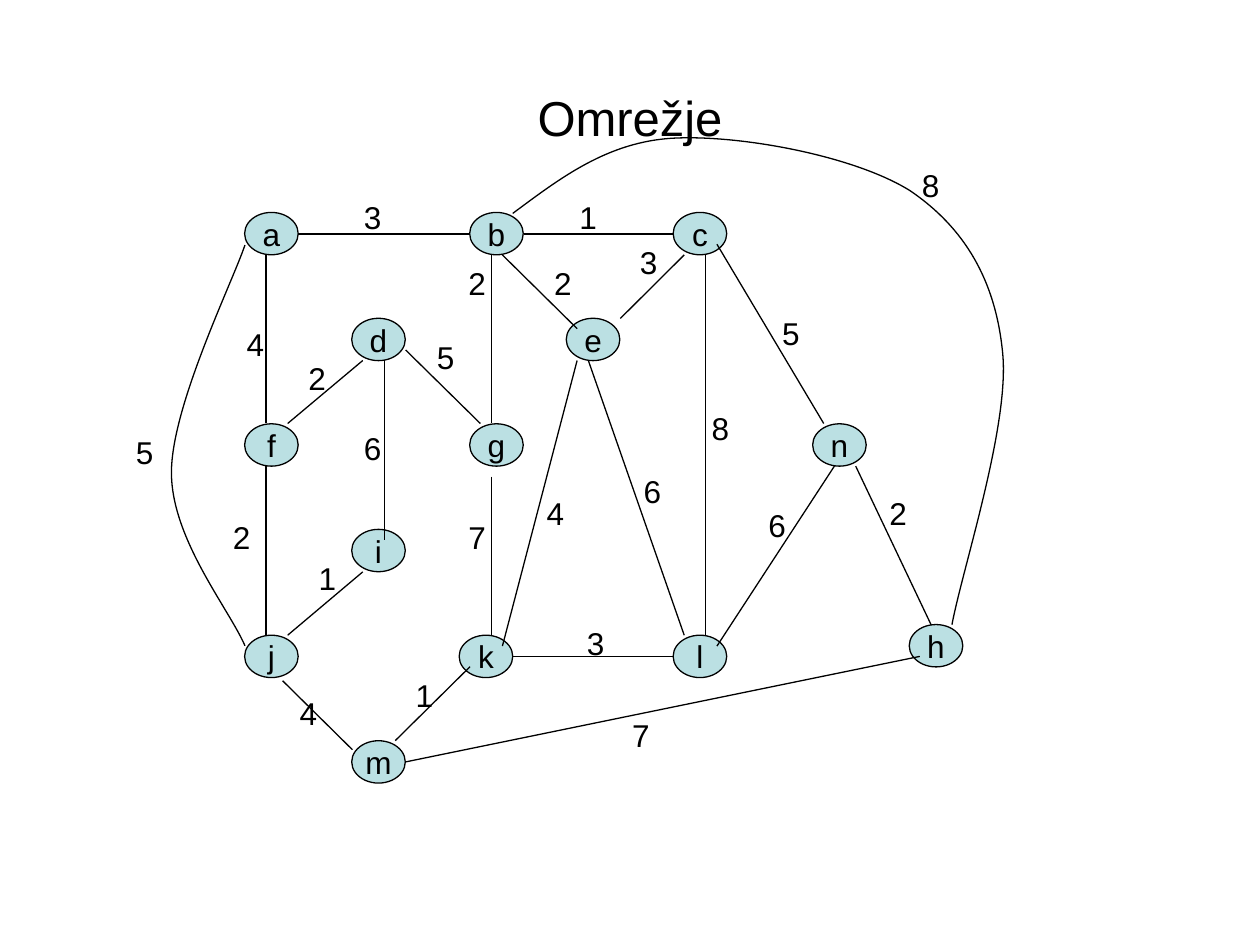
import pptx
import pptx.util
import pptx.dml.color
import pptx.enum.shapes
import pptx.enum.text
import pptx.oxml
import pptx.oxml.ns

Pt = pptx.util.Pt
COLORS = {"ink": "000000", "node": "BBE0E3"}
FONT = "Arial"
TITLE = "Omrežje"
NODE_WIDTH, NODE_HEIGHT = 30.6, 24.2
LABEL_WIDTH, LABEL_HEIGHT = 24.5, 28.8

NODES = {
    "a": (155.1, 133.5), "b": (283.7, 133.5), "c": (400, 133.5),
    "d": (216.3, 194), "e": (338.9, 194),
    "f": (155.1, 254.3), "g": (283.7, 254.3), "n": (479.7, 254.3),
    "i": (216.3, 314.6), "j": (155.1, 375.1), "k": (277.7, 375.1),
    "l": (400, 375.1), "h": (534.9, 369), "m": (216.3, 435.4),
}

# weight, label corner, start, end
EDGES = [
    ("3", (200.9, 109.4), (170.4, 133.7), (268.6, 133.7)),
    ("1", (324, 109.4), (299.3, 133.7), (385.2, 133.7)),
    ("3", (358.6, 135.4), (391, 145.7), (354.5, 182)),
    ("8", (399.6, 230.4), (403.2, 145.7), (403.2, 363)),
    ("6", (432, 285.8), (476.8, 266.4), (409.7, 369.2)),
    ("2", (501.1, 278.6), (489, 266.4), (532.1, 357.1)),
    ("1", (230.4, 383), (225.9, 423.2), (268.6, 381)),
    ("4", (133.9, 182.2), (152.1, 145.7), (152.1, 242)),
    ("2", (126, 292.3), (152.1, 266.4), (152.1, 363)),
    ("1", (175, 316.1), (164.4, 363), (207.3, 326.8)),
    ("6", (200.9, 241.9), (219.6, 206), (219.6, 308.6)),
    ("2", (169.2, 201.6), (164.4, 242), (207.3, 206)),
    ("5", (242.6, 189.4), (231.8, 200), (274.5, 242)),
    ("2", (309.6, 147.6), (287.1, 145.7), (329.8, 187.8)),
    ("2", (260.6, 147.6), (280.9, 145.7), (280.9, 242)),
    ("7", (260.6, 292.3), (280.9, 272.4), (280.9, 363)),
    ("6", (360.7, 266.4), (336.2, 206), (391, 363)),
    ("7", (354.2, 405.4), (231.8, 435.4), (525.6, 375.1)),
    ("5", (439.9, 175.7), (409.7, 139.6), (470.7, 242)),
    ("3", (328.3, 352.8), (293.1, 375.1), (385.2, 375.1)),
    ("4", (305.3, 278.6), (329.8, 206), (287.1, 369.2)),
    ("4", (164.2, 393.1), (161.5, 389), (201.4, 428.4)),
]

CURVED_EDGES = [
    ("5", (70.6, 244.1), [
        (139.9, 139.6), (133.2, 161.3), (97.9, 231.8), (97.9, 270),
        (97.9, 308.2), (131, 348.5), (139.9, 369.2)]),
    ("8", (519.8, 91.4), [
        (293.1, 121.5), (320.4, 101.5), (347, 81.4), (385.2, 79.2),
        (422.6, 77), (488.2, 89.3), (519.8, 109.4),
        (550.8, 129.6), (568.8, 159.8), (573.1, 201.6),
        (577.4, 242.6), (550, 324.7), (544.2, 357.1)]),
]


def rgb(name):
    return pptx.dml.color.RGBColor.from_string(COLORS[name])


def write_text(shape, text, size=18, align=None, anchor=None, wrap=False, auto_size=None):
    frame = shape.text_frame
    frame.word_wrap = wrap
    if anchor is not None:
        frame.vertical_anchor = anchor
    if auto_size is not None:
        frame.auto_size = auto_size
    paragraph = frame.paragraphs[0]
    paragraph.alignment = align
    run = paragraph.add_run()
    run.text = text
    run.font.name = FONT
    run.font.size = Pt(size)
    run.font.color.rgb = rgb("ink")


def outline(shape):
    shape.line.color.rgb = rgb("ink")
    shape.line.width = Pt(0.75)


def add_node(shapes, name, center):
    shape = shapes.add_shape(
        pptx.enum.shapes.MSO_SHAPE.OVAL,
        Pt(center[0] - NODE_WIDTH / 2), Pt(center[1] - NODE_HEIGHT / 2),
        Pt(NODE_WIDTH), Pt(NODE_HEIGHT))
    shape.shadow.inherit = False
    shape.fill.solid()
    shape.fill.fore_color.rgb = rgb("node")
    outline(shape)
    write_text(shape, name, align=pptx.enum.text.PP_ALIGN.CENTER,
               anchor=pptx.enum.text.MSO_ANCHOR.MIDDLE)


def add_edge(shapes, start, end):
    connector = shapes.add_connector(
        pptx.enum.shapes.MSO_CONNECTOR.STRAIGHT,
        *[Pt(value) for value in start + end])
    outline(connector)
    connector._element.spPr.append(pptx.oxml.parse_xml(
        f'<a:effectLst {pptx.oxml.ns.nsdecls("a")}/>'))


def add_curve(shapes, points):
    builder = shapes.build_freeform(*points[0], scale=Pt(1))
    builder.add_line_segments(points[1:], close=False)
    shape = builder.convert_to_shape()
    shape.shadow.inherit = False
    shape.fill.background()
    outline(shape)
    segments = shape._element.findall(".//" + pptx.oxml.ns.qn("a:lnTo"))
    for index in range(0, len(segments), 3):
        curve = pptx.oxml.parse_xml(
            f'<a:cubicBezTo {pptx.oxml.ns.nsdecls("a")}/>')
        segments[index].addprevious(curve)
        for segment in segments[index:index + 3]:
            curve.append(segment[0])
            segment.getparent().remove(segment)


def add_label(shapes, weight, corner):
    box = shapes.add_textbox(
        Pt(corner[0]), Pt(corner[1]), Pt(LABEL_WIDTH), Pt(LABEL_HEIGHT))
    write_text(box, weight,
               auto_size=pptx.enum.text.MSO_AUTO_SIZE.SHAPE_TO_FIT_TEXT)


def main():
    presentation = pptx.Presentation()
    presentation.slide_width, presentation.slide_height = Pt(720), Pt(540)
    slide = presentation.slides.add_slide(presentation.slide_layouts[5])

    title = slide.shapes.title
    title.left, title.top, title.width, title.height = Pt(36), Pt(21.6), Pt(648), Pt(90)
    write_text(title, TITLE, size=28, wrap=True,
               align=pptx.enum.text.PP_ALIGN.CENTER,
               anchor=pptx.enum.text.MSO_ANCHOR.MIDDLE)

    network = slide.shapes.add_group_shape().shapes
    for name, center in NODES.items():
        add_node(network, name, center)
    for weight, corner, start, end in EDGES:
        add_edge(network, start, end)
    for weight, corner, points in CURVED_EDGES:
        add_curve(network, points)
    for weight, corner, *route in EDGES + CURVED_EDGES:
        add_label(network, weight, corner)

    presentation.save("out.pptx")


if __name__ == "__main__":
    main()
